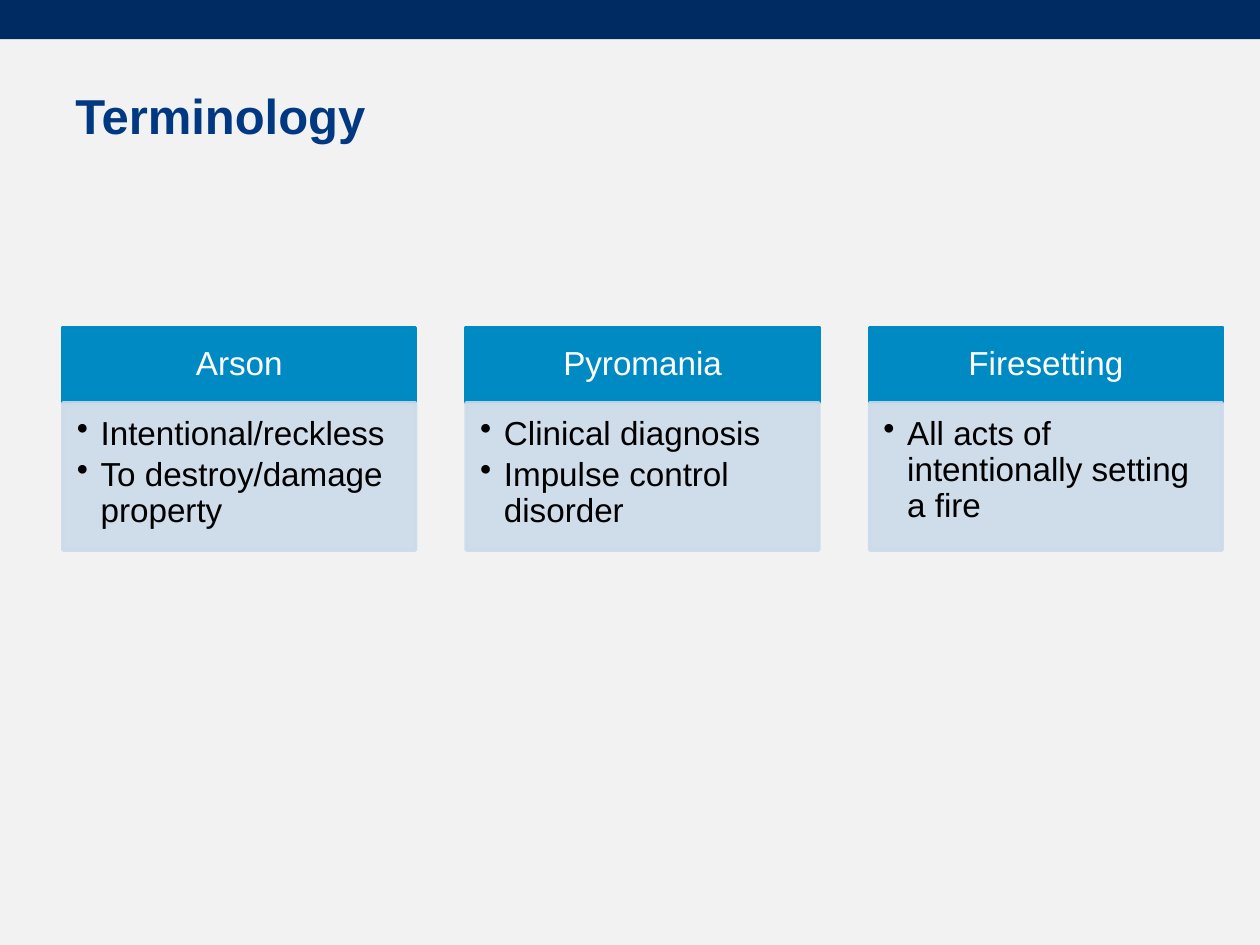
from dataclasses import dataclass

from lxml import etree
from pptx import Presentation
from pptx.dml.color import RGBColor
from pptx.enum import shapes, text
from pptx.oxml import ns
from pptx.util import Cm, Pt


@dataclass(frozen=True)
class Theme:
    font: str = "Arial"
    back: str = "F2F2F2"
    band: str = "002A62"
    title: str = "003882"
    head: str = "008AC4"
    body: str = "CCDAEA"
    light: str = "FFFFFF"
    dark: str = "000000"
    big: float = 28
    small: float = 19
    alpha: int = 90


@dataclass(frozen=True)
class Box:
    left: float
    top: float
    width: float
    height: float


@dataclass(frozen=True)
class Term:
    name: str
    points: tuple[str, ...]


THEME = Theme()
TERMS = (
    Term("Arson", ("Intentional/reckless", "To destroy/damage property")),
    Term("Pyromania", ("Clinical diagnosis", "Impulse control disorder")),
    Term("Firesetting", ("All acts of intentionally setting a fire",)),
)
LEFT, TOP, WIDTH, STEP = 1.27, 6.6, 7.11, 8.13
HEAD, BODY = 1.52, 2.97
INDENT = 0.48


def rgb(code: str) -> RGBColor:
    return RGBColor.from_string(code)


def fade(fill, alpha: int) -> None:
    """Set the opacity of a solid fill, in percent."""
    for color in fill.iter(ns.qn("a:srgbClr")):
        etree.SubElement(color, ns.qn("a:alpha"), val=str(alpha * 1000))


def rect(slide, box: Box, color: str, line: bool = True):
    shape = slide.shapes.add_shape(
        shapes.MSO_SHAPE.RECTANGLE,
        Cm(box.left), Cm(box.top), Cm(box.width), Cm(box.height))
    shape.shadow.inherit = False
    shape.fill.solid()
    shape.fill.fore_color.rgb = rgb(color)
    if line:
        shape.line.color.rgb = rgb(color)
        shape.line.width = Pt(2)
    else:
        shape.line.fill.background()
    return shape


def frame(shape, anchor, insets: tuple[float, ...]):
    """Prepare wrapping, anchor and left, top, right, bottom insets."""
    area = shape.text_frame
    area.word_wrap = True
    area.vertical_anchor = anchor
    (area.margin_left, area.margin_top,
     area.margin_right, area.margin_bottom) = map(Cm, insets)
    return area


def style(para, size: float, color: str, bold: bool = False) -> None:
    for run in para.runs:
        run.font.name = THEME.font
        run.font.size = Pt(size)
        run.font.bold = bold
        run.font.color.rgb = rgb(color)


def bullet(para) -> None:
    props = para._p.get_or_add_pPr()
    props.set("marL", str(Cm(INDENT)))
    props.set("indent", str(-Cm(INDENT)))
    etree.SubElement(props, ns.qn("a:buChar"), char="•")


def title(slide, words: str) -> None:
    shape = slide.shapes.add_textbox(Cm(1.27), Cm(1.52), Cm(23.04), Cm(1.6))
    area = frame(shape, text.MSO_ANCHOR.MIDDLE, (0.25, 0.13, 0.25, 0.13))
    area.text = words
    style(area.paragraphs[0], THEME.big, THEME.title, bold=True)


def card(slide, left: float, term: Term) -> None:
    head = rect(slide, Box(left, TOP, WIDTH, HEAD), THEME.head)
    area = frame(head, text.MSO_ANCHOR.MIDDLE, (0.38, 0.2, 0.38, 0.2))
    area.text = term.name
    para = area.paragraphs[0]
    para.alignment = text.PP_ALIGN.CENTER
    para.line_spacing = 0.9
    style(para, THEME.small, THEME.light)

    body = rect(slide, Box(left, TOP + HEAD, WIDTH, BODY), THEME.body)
    fade(body._element.spPr, THEME.alpha)
    area = frame(body, text.MSO_ANCHOR.TOP, (0.28, 0.28, 0.38, 0.43))
    area.text = "\n".join(term.points)
    for para in area.paragraphs:
        para.alignment = text.PP_ALIGN.LEFT
        para.line_spacing = 0.9
        para.space_after = Pt(0.15 * THEME.small)
        bullet(para)
        style(para, THEME.small, THEME.dark)


def main() -> None:
    deck = Presentation()
    deck.slide_width, deck.slide_height = Cm(25.4), Cm(19.05)
    slide = deck.slides.add_slide(deck.slide_layouts[6])
    slide.background.fill.solid()
    slide.background.fill.fore_color.rgb = rgb(THEME.back)
    rect(slide, Box(0, 0, 25.4, 0.79), THEME.band, line=False)
    title(slide, "Terminology")
    for index, term in enumerate(TERMS):
        card(slide, LEFT + index * STEP, term)
    deck.save("out.pptx")


if __name__ == "__main__":
    main()
